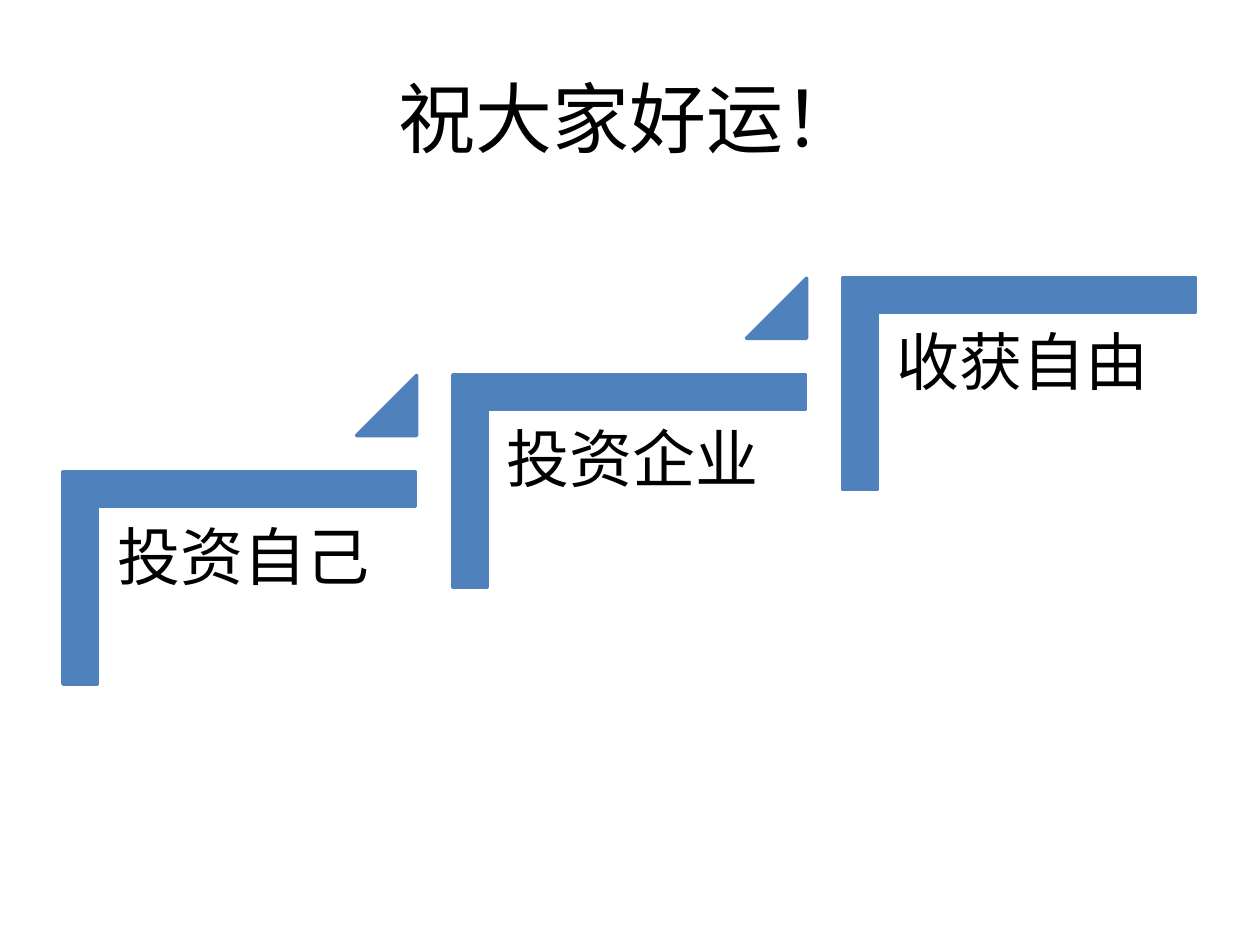
import pptx
import pptx.util
import pptx.dml.color
import pptx.enum.shapes
import pptx.enum.text

Cm, Pt = pptx.util.Cm, pptx.util.Pt
SHAPES = pptx.enum.shapes.MSO_SHAPE
ALIGN = pptx.enum.text.PP_ALIGN
ANCHOR = pptx.enum.text.MSO_ANCHOR

# Content
TITLE = "祝大家好运！"
STEPS = ["投资自己", "投资企业", "收获自由"]
COLORS = {"step": "4F81BD", "text": "000000"}
FONT = "Calibri"

# Layout in cm: parts of the first step, and the shift from step to step
STEP_RIGHT, STEP_UP = 7.86, 1.96
CORNER_BOX = (2.69, 8.1, 4.27, 7.11)
LABEL_BOX = (1.98, 10.22, 6.43, 5.64)
TRIANGLE_BOX = (7.19, 7.57, 1.21, 1.21)


def color(name):
    return pptx.dml.color.RGBColor.from_string(COLORS[name])


def shifted(box, index):
    left, top, width, height = box
    return left + index * STEP_RIGHT, top - index * STEP_UP, width, height


def add_text(slide, text, box, size, align=ALIGN.LEFT, anchor=ANCHOR.TOP,
             inset=0.25, line_spacing=1.0):
    shape = slide.shapes.add_textbox(*map(Cm, box))
    frame = shape.text_frame
    frame.word_wrap = True
    frame.vertical_anchor = anchor
    frame.margin_left = frame.margin_right = Cm(inset)
    frame.margin_top = frame.margin_bottom = Cm(inset)
    paragraph = frame.paragraphs[0]
    paragraph.alignment = align
    paragraph.line_spacing = line_spacing
    run = paragraph.add_run()
    run.text = text
    run.font.name = FONT
    run.font.size = Pt(size)
    run.font.color.rgb = color("text")


def add_block(slide, kind, box, adjustments, rotation=0):
    shape = slide.shapes.add_shape(kind, *map(Cm, box))
    for position, value in enumerate(adjustments):
        shape.adjustments[position] = value
    shape.rotation = rotation
    shape.shadow.inherit = False
    shape.fill.solid()
    shape.fill.fore_color.rgb = color("step")
    shape.line.color.rgb = color("step")
    shape.line.width = Pt(2)


def main():
    presentation = pptx.Presentation()
    presentation.slide_width, presentation.slide_height = Cm(25.4), Cm(19.05)
    slide = presentation.slides.add_slide(presentation.slide_layouts[6])

    # Title
    add_text(slide, TITLE, (1.27, 0.76, 22.86, 3.18), 44,
             align=ALIGN.CENTER, anchor=ANCHOR.MIDDLE)

    # Rising steps, with a triangle leading to each next one
    for index, label in enumerate(STEPS):
        add_block(slide, SHAPES.CORNER, shifted(CORNER_BOX, index),
                  (0.161, 0.161), rotation=90)
        add_text(slide, label, shifted(LABEL_BOX, index), 36,
                 inset=0.38, line_spacing=0.9)
        if index < len(STEPS) - 1:
            add_block(slide, SHAPES.ISOSCELES_TRIANGLE,
                      shifted(TRIANGLE_BOX, index), (1.0,))

    presentation.save("out.pptx")


if __name__ == "__main__":
    main()
